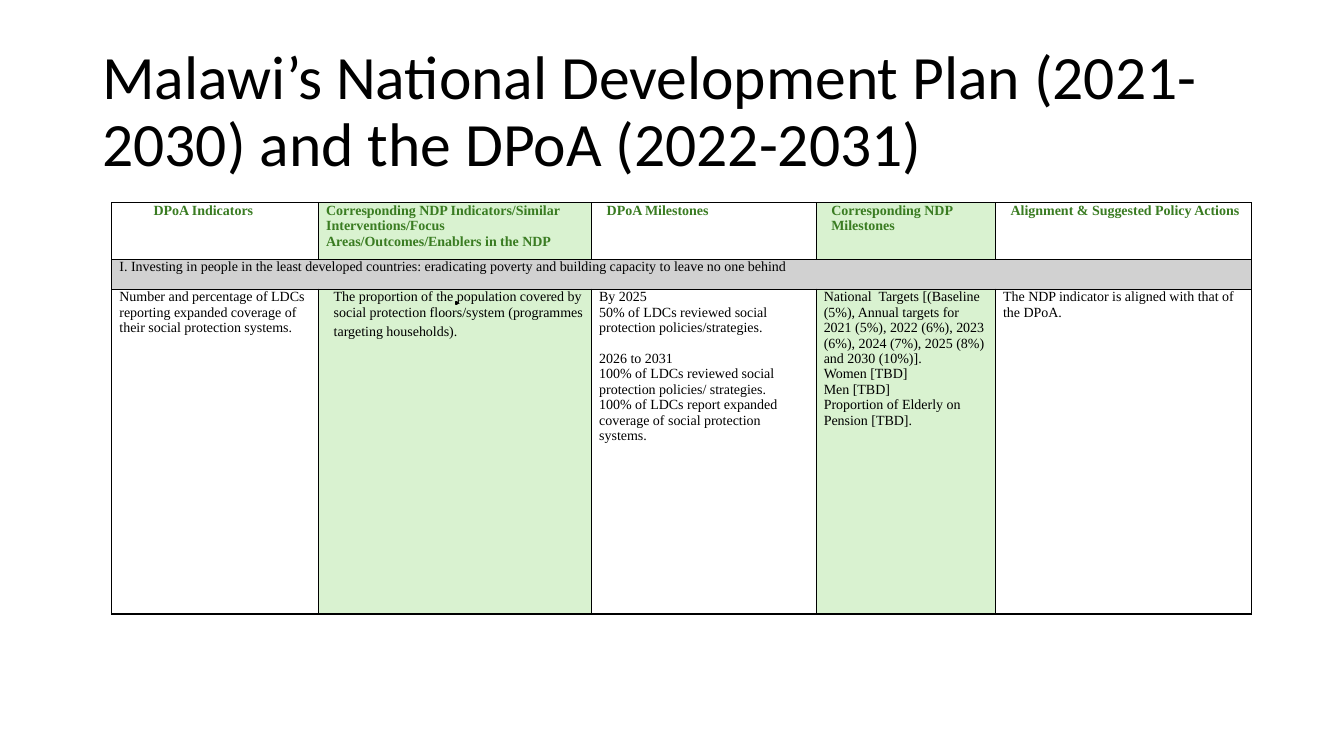
import pptx
import pptx.dml.color
import pptx.enum.shapes
import pptx.enum.text
import pptx.oxml
import pptx.oxml.ns
import pptx.util
from pptx.util import Cm, Pt

COLOURS = {"black": "000000", "heading": "3A7C22", "green": "D9F2D0", "grey": "D1D1D1"}
GREEN_COLUMNS = (1, 3)
COLUMN_WIDTHS = (5.21, 6.88, 5.66, 4.52, 6.45)
ROW_HEIGHTS = (1.42, 0.76, 8.18)
CELL_FORMAT = {"margin_left": Cm(0.19), "margin_right": Cm(0.19), "margin_top": 0, "margin_bottom": 0}

# Each paragraph is (text, left indent in cm, space before in points).
HEADINGS = [
    [("DPoA Indicators", 0.86, 0)],
    [("Corresponding NDP Indicators/Similar Interventions/Focus Areas/Outcomes/Enablers in the NDP", 0, 3)],
    [("DPoA Milestones", 0.19, 3)],
    [("Corresponding NDP Milestones", 0.19, 3)],
    [("Alignment & Suggested Policy Actions", 0.19, 3)],
]
SECTION = [[("I. Investing in people in the least developed countries: eradicating poverty "
             "and building capacity to leave no one behind", 0, 3)]]
DETAILS = [
    [("Number and percentage of LDCs reporting expanded coverage of their social protection systems.", 0, 0)],
    [("The proportion of the population covered by social protection floors/system (programmes", 0.19, 3),
     ("targeting households).", 0.19, 3)],
    [("By 2025", 0, 0),
     ("50% of LDCs reviewed social protection policies/strategies.", 0, 0),
     ("2026 to 2031", 0, 11),
     ("100% of LDCs reviewed social protection policies/ strategies.", 0, 0),
     ("100% of LDCs report expanded coverage of social protection systems.", 0, 0)],
    [("National  Targets [(Baseline (5%), Annual targets for 2021 (5%), 2022 (6%), 2023 (6%), "
      "2024 (7%), 2025 (8%) and 2030 (10%)].", 0, 0),
     ("Women [TBD]", 0, 0),
     ("Men [TBD]", 0, 0),
     ("Proportion of Elderly on Pension [TBD].", 0, 0)],
    [("The NDP indicator is aligned with that of the DPoA.", 0, 0)],
]


def rgb(name):
    return pptx.dml.color.RGBColor.from_string(COLOURS[name])


def write(paragraph, text, font_name, size, colour, bold=False):
    run = paragraph.add_run()
    run.text = text
    for attribute, value in {"name": font_name, "size": Pt(size), "bold": bold}.items():
        setattr(run.font, attribute, value)
    run.font.color.rgb = rgb(colour)


presentation = pptx.Presentation()
presentation.slide_width = Cm(33.87)
presentation.slide_height = Cm(19.05)
slide = presentation.slides.add_slide(presentation.slide_layouts[6])

# Title
title = slide.shapes.add_textbox(Cm(2.33), Cm(1.01), Cm(29.21), Cm(3.68))
title.text_frame.word_wrap = True
title.text_frame.vertical_anchor = pptx.enum.text.MSO_ANCHOR.MIDDLE
title_paragraph = title.text_frame.paragraphs[0]
title_paragraph.line_spacing = 0.9
write(title_paragraph, "Malawi’s National Development Plan (2021-2030) and the DPoA (2022-2031)",
      "Calibri", 44, "black")

# Table grid
table = slide.shapes.add_table(len(ROW_HEIGHTS), len(COLUMN_WIDTHS), Cm(2.82), Cm(5.11),
                               Cm(sum(COLUMN_WIDTHS)), Cm(sum(ROW_HEIGHTS))).table
table.first_row = False
table.horz_banding = False
for column, width in zip(table.columns, COLUMN_WIDTHS):
    column.width = Cm(width)
for row, height in zip(table.rows, ROW_HEIGHTS):
    row.height = Cm(height)
table.cell(1, 0).merge(table.cell(1, len(COLUMN_WIDTHS) - 1))

# Cell fills, borders and text
for row_index, contents in enumerate((HEADINGS, SECTION, DETAILS)):
    for column_index in range(len(COLUMN_WIDTHS)):
        cell = table.cell(row_index, column_index)
        for attribute, value in CELL_FORMAT.items():
            setattr(cell, attribute, value)
        if row_index == 1 or column_index in GREEN_COLUMNS:
            cell.fill.solid()
            cell.fill.fore_color.rgb = rgb("grey" if row_index == 1 else "green")
        else:
            cell.fill.background()
        properties = cell._tc.get_or_add_tcPr()
        for position, side in enumerate(("lnL", "lnR", "lnT", "lnB")):
            properties.insert(position, pptx.oxml.parse_xml(
                f'<a:{side} {pptx.oxml.ns.nsdecls("a")} w="12700"><a:solidFill>'
                f'<a:srgbClr val="{COLOURS["black"]}"/></a:solidFill></a:{side}>'))
        if column_index >= len(contents):
            continue
        is_heading = row_index == 0
        for index, (text, indent, space_before) in enumerate(contents[column_index]):
            frame = cell.text_frame
            paragraph = frame.add_paragraph() if index else frame.paragraphs[0]
            paragraph.space_before = Pt(space_before)
            paragraph._p.get_or_add_pPr().set("marL", str(Cm(indent)))
            write(paragraph, text, "Times New Roman", 10, "heading" if is_heading else "black", is_heading)

# Small square mark over the table
mark = slide.shapes.add_shape(pptx.enum.shapes.MSO_SHAPE.RECTANGLE, Cm(11.48), Cm(7.62), Cm(0.05), Cm(0.05))
mark.shadow.inherit = False
mark.fill.background()
mark.line.color.rgb = rgb("black")
mark.line.width = Pt(1.42)

presentation.save("out.pptx")
